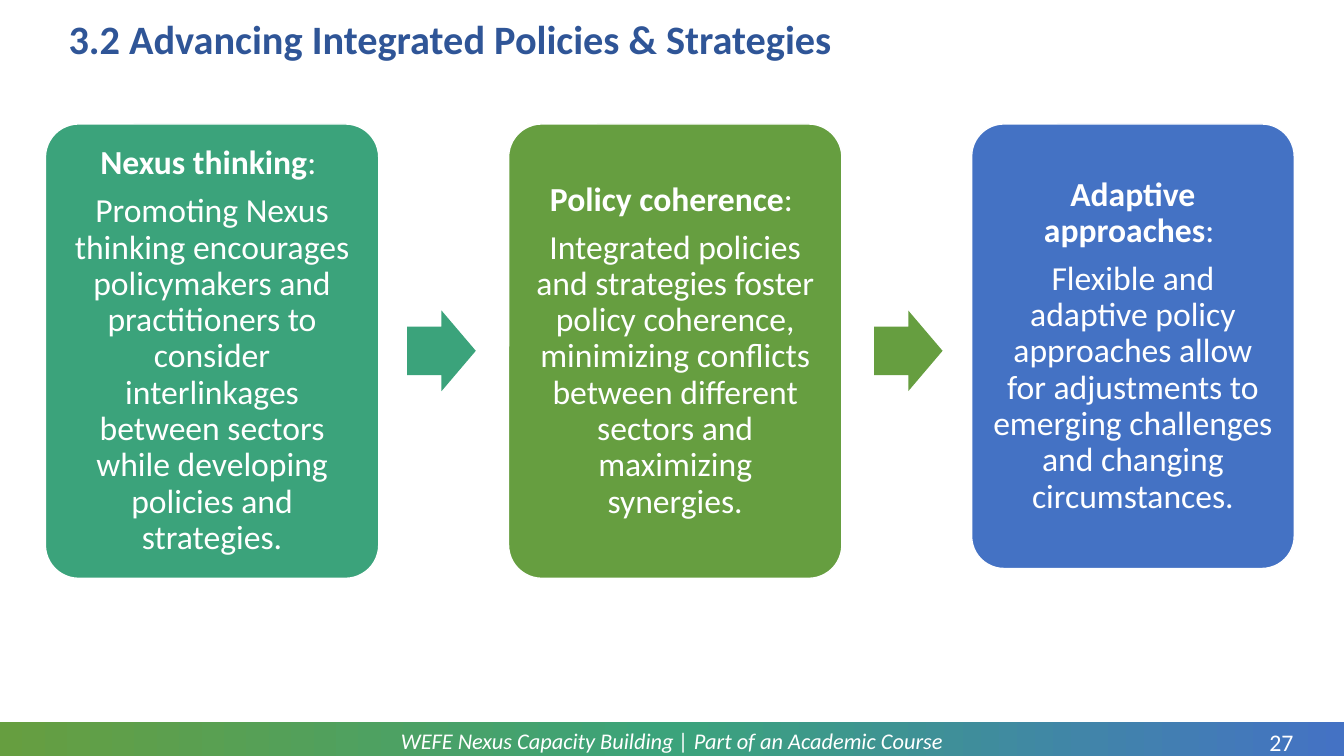
from copy import deepcopy
from dataclasses import dataclass

from pptx import Presentation
from pptx.dml.color import RGBColor
from pptx.enum.shapes import MSO_SHAPE
from pptx.enum.text import MSO_ANCHOR, MSO_AUTO_SIZE, PP_ALIGN
from pptx.oxml.ns import qn
from pptx.util import Inches, Pt

WHITE = RGBColor(0xFF, 0xFF, 0xFF)
NAVY = RGBColor(0x2F, 0x55, 0x97)
TEAL = RGBColor(0x3B, 0xA3, 0x7B)
GREEN = RGBColor(0x66, 0x9E, 0x40)
BLUE = RGBColor(0x44, 0x72, 0xC4)

FONT = "Calibri"
SLIDE_WIDTH = Inches(13.33)
SLIDE_HEIGHT = Inches(7.5)
GRID_COLUMNS = 100
GRID_ROWS = 100

CARD_LEFT, CARD_PITCH, CARD_TOP = 3.38, 34.46, 16.4
ARROW_LEFT, ARROW_PITCH = 30.3, 34.73


@dataclass
class Box:
    column: float
    row: float
    columns: float
    rows: float

    def lengths(self) -> tuple[int, int, int, int]:
        return (
            round(self.column * SLIDE_WIDTH / GRID_COLUMNS),
            round(self.row * SLIDE_HEIGHT / GRID_ROWS),
            round(self.columns * SLIDE_WIDTH / GRID_COLUMNS),
            round(self.rows * SLIDE_HEIGHT / GRID_ROWS),
        )


@dataclass
class Card:
    heading: str
    body: str
    color: RGBColor
    columns: float
    rows: float


@dataclass
class Label:
    text: str
    box: Box
    size: float
    italic: bool


CARDS = [
    Card(
        "Nexus thinking",
        "Promoting Nexus thinking encourages policymakers and practitioners to consider "
        "interlinkages between sectors while developing policies and strategies.",
        TEAL, 24.8, 60.1,
    ),
    Card(
        "Policy coherence",
        "Integrated policies and strategies foster policy coherence, minimizing conflicts "
        "between different sectors and maximizing synergies.",
        GREEN, 24.8, 60.1,
    ),
    Card(
        "Adaptive approaches",
        "Flexible and adaptive policy approaches allow for adjustments to emerging "
        "challenges and changing circumstances.",
        BLUE, 24, 58.8,
    ),
]

LABELS = [
    Label("WEFE Nexus Capacity Building | Part of an Academic Course",
          Box(6.9, 95.6, 86.2, 4.8), 16, True),
    Label("27", Box(93.1, 96.27, 4.5, 3.87), 17, False),
]


def add_run(paragraph, text: str, size: float, color: RGBColor = WHITE,
            bold: bool = False, italic: bool = False) -> None:
    run = paragraph.add_run()
    run.text = text
    run.font.name = FONT
    run.font.size = Pt(size)
    run.font.color.rgb = color
    run.font.bold = bold
    run.font.italic = italic


def set_frame(frame, margin: float) -> None:
    frame.word_wrap = True
    frame.auto_size = MSO_AUTO_SIZE.NONE
    frame.vertical_anchor = MSO_ANCHOR.MIDDLE
    frame.margin_left = frame.margin_right = Inches(margin)
    frame.margin_top = frame.margin_bottom = Inches(margin)


def add_filled_shape(slide, kind: MSO_SHAPE, box: Box, color: RGBColor):
    shape = slide.shapes.add_shape(kind, *box.lengths())
    shape.shadow.inherit = False
    shape.fill.solid()
    shape.fill.fore_color.rgb = color
    shape.line.fill.background()
    return shape


def add_title(slide, text: str) -> None:
    title = slide.shapes.title
    title.left, title.top, title.width, title.height = Box(4.35, 1.73, 91.1, 7.5).lengths()
    set_frame(title.text_frame, 0.1)
    paragraph = title.text_frame.paragraphs[0]
    paragraph.alignment = PP_ALIGN.LEFT
    paragraph.line_spacing = 0.9
    add_run(paragraph, text, 28.8, NAVY, bold=True)


def add_footer_bar(slide) -> None:
    bar = add_filled_shape(slide, MSO_SHAPE.RECTANGLE, Box(0, 95.47, 100, 5.07), GREEN)
    bar.fill.gradient()
    bar.fill.gradient_angle = 0
    first_stop = bar.element.spPr.find(f".//{qn('a:gs')}")
    first_stop.addnext(deepcopy(first_stop))
    for stop, color, position in zip(bar.fill.gradient_stops, (GREEN, TEAL, BLUE), (0, 0.5, 1)):
        stop.color.rgb = color
        stop.position = position


def add_label(slide, label: Label) -> None:
    frame = slide.shapes.add_textbox(*label.box.lengths()).text_frame
    set_frame(frame, 0)
    paragraph = frame.paragraphs[0]
    paragraph.alignment = PP_ALIGN.CENTER
    add_run(paragraph, label.text, label.size, italic=label.italic)


def add_card(slide, index: int, card: Card) -> None:
    box = Box(CARD_LEFT + index * CARD_PITCH, CARD_TOP, card.columns, card.rows)
    shape = add_filled_shape(slide, MSO_SHAPE.ROUNDED_RECTANGLE, box, card.color)
    shape.adjustments[0] = 0.1
    shape.line.color.rgb = WHITE
    shape.line.width = Pt(1)
    frame = shape.text_frame
    set_frame(frame, 0.1)
    heading, body = frame.paragraphs[0], frame.add_paragraph()
    for paragraph in (heading, body):
        paragraph.alignment = PP_ALIGN.CENTER
        paragraph.line_spacing = 0.9
    heading.space_after = Pt(8.4)
    add_run(heading, card.heading, 24, bold=True)
    add_run(heading, ": ", 24)
    add_run(body, card.body, 24)


def add_arrow(slide, index: int, color: RGBColor) -> None:
    box = Box(ARROW_LEFT + index * ARROW_PITCH, 41.07, 5.1, 10.67)
    arrow = add_filled_shape(slide, MSO_SHAPE.RIGHT_ARROW, box, color)
    arrow.adjustments[0] = 0.6
    arrow.adjustments[1] = 0.5


def main() -> None:
    presentation = Presentation()
    presentation.slide_width = SLIDE_WIDTH
    presentation.slide_height = SLIDE_HEIGHT
    slide = presentation.slides.add_slide(presentation.slide_layouts.get_by_name("Title Only"))
    add_footer_bar(slide)
    for label in LABELS:
        add_label(slide, label)
    add_title(slide, "3.2 Advancing Integrated Policies & Strategies")
    for index, card in enumerate(CARDS):
        add_card(slide, index, card)
        if index < len(CARDS) - 1:
            add_arrow(slide, index, card.color)
    presentation.save("out.pptx")


if __name__ == "__main__":
    main()
